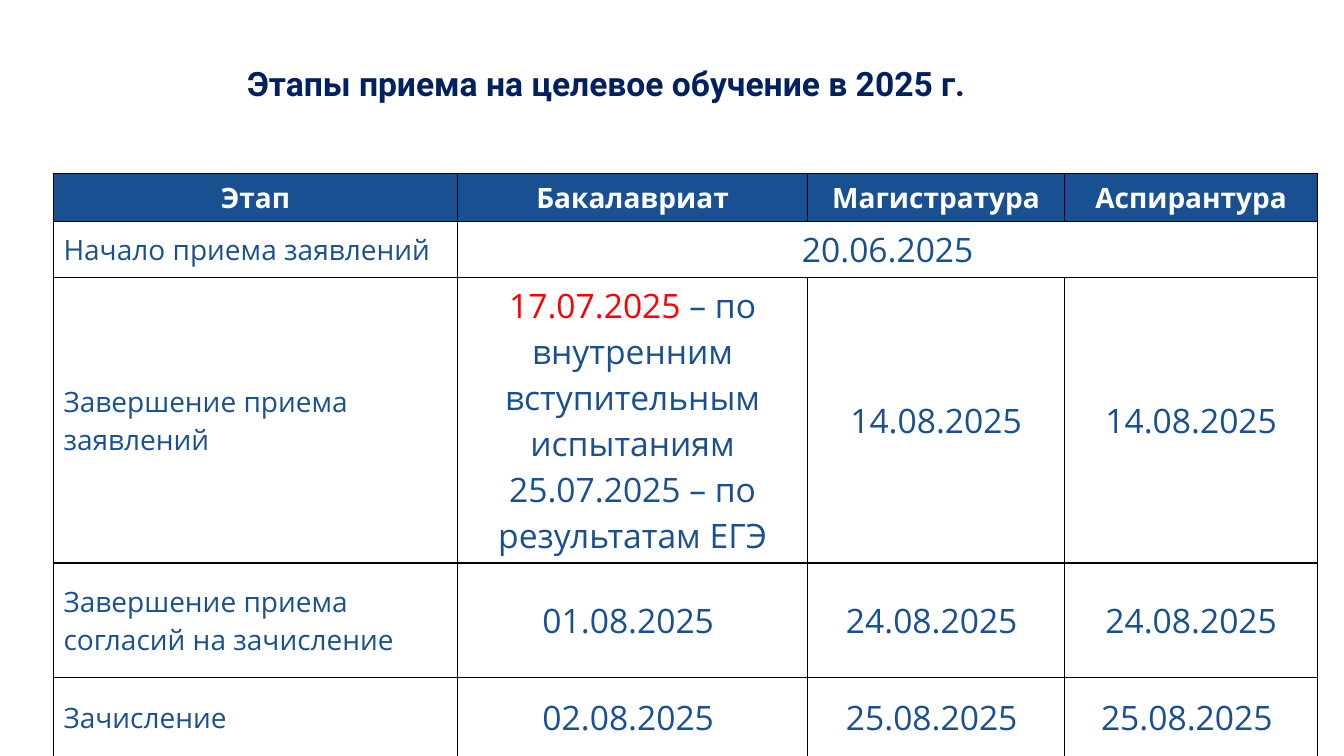
"""Builds the slide with the stages of targeted admission in 2025."""
from lxml import etree
from pptx import Presentation
from pptx.dml.color import RGBColor
from pptx.enum import text
from pptx.oxml import ns
from pptx.util import Inches, Pt

NAVY, BLUE, RED, WHITE, BLACK = "002060", "195091", "FF0000", "FFFFFF", "000000"

TITLE = "Этапы приема на целевое обучение в 2025 г."
HEADINGS = ["Этап", "Бакалавриат", "Магистратура", "Аспирантура"]
BACHELOR_DEADLINES = [
    ("17.07.2025 ", RED),
    ("– по внутренним вступительным испытаниям 25.07.2025 – по результатам ЕГЭ", BLUE),
]
STAGES = [
    ("Начало приема заявлений", "20.06.2025"),
    ("Завершение приема заявлений", BACHELOR_DEADLINES, "14.08.2025", "14.08.2025"),
    ("Завершение приема согласий на зачисление", "01.08.2025 ", "24.08.2025 ", "24.08.2025"),
    ("Зачисление", "02.08.2025 ", "25.08.2025 ", "25.08.2025 "),
]
TITLE_BOX = {"left": 2.35, "top": 0, "width": 11.5, "height": 1.7}
TABLE_LEFT, TABLE_TOP = 0.53, 1.72
COLUMN_WIDTHS = [4.01, 3.47, 2.55, 2.51]
ROW_HEIGHTS = [0.45, 0.52, 2.59, 1.14, 0.79]

TITLE_FONT = {"name": "Roboto", "size": Pt(24), "bold": True}
HEADING_FONT = {"name": "Open Sans", "size": Pt(20), "bold": True}
STAGE_FONT = {"name": "Open Sans", "size": Pt(20), "bold": False}
DATE_FONT = {"name": "Open Sans", "size": Pt(24), "bold": False}


def color(value):
    return RGBColor.from_string(value)


def write(paragraph, pieces, font_format, align):
    paragraph.alignment = align
    for wording, tint in pieces:
        run = paragraph.add_run()
        run.text = wording
        for key, value in font_format.items():
            setattr(run.font, key, value)
        run.font.color.rgb = color(tint)


def add_borders(cell):
    properties = cell._tc.get_or_add_tcPr()
    for position, side in enumerate(("lnL", "lnR", "lnT", "lnB")):
        border = etree.Element(ns.qn(f"a:{side}"), w=str(Pt(1)))
        fill = etree.SubElement(border, ns.qn("a:solidFill"))
        etree.SubElement(fill, ns.qn("a:srgbClr"), val=BLACK)
        properties.insert(position, border)


def add_title(slide):
    title = slide.shapes.title
    for key, value in TITLE_BOX.items():
        setattr(title, key, Inches(value))
    title.text_frame.vertical_anchor = text.MSO_ANCHOR.MIDDLE
    heading = title.text_frame.paragraphs[0]
    heading.line_spacing = 0.9
    write(heading, [(TITLE, NAVY)], TITLE_FONT, text.PP_ALIGN.LEFT)


def add_schedule(slide):
    schedule = slide.shapes.add_table(
        len(ROW_HEIGHTS), len(COLUMN_WIDTHS), Inches(TABLE_LEFT), Inches(TABLE_TOP),
        Inches(sum(COLUMN_WIDTHS)), Inches(sum(ROW_HEIGHTS))).table
    for column, width in zip(schedule.columns, COLUMN_WIDTHS):
        column.width = Inches(width)
    for row, height in zip(schedule.rows, ROW_HEIGHTS):
        row.height = Inches(height)
    for cell in schedule.iter_cells():
        cell.vertical_anchor = text.MSO_ANCHOR.MIDDLE
        cell.fill.background()
        add_borders(cell)

    for r, entries in enumerate([HEADINGS, *STAGES]):
        for c, entry in enumerate(entries):
            cell = schedule.cell(r, c)
            align, tint = text.PP_ALIGN.CENTER, BLUE
            if r == 0:
                font_format, tint = HEADING_FONT, WHITE
                cell.fill.solid()
                cell.fill.fore_color.rgb = color(BLUE)
            elif c == 0:
                font_format, align = STAGE_FONT, text.PP_ALIGN.LEFT
            else:
                font_format = DATE_FONT
            pieces = [(entry, tint)] if isinstance(entry, str) else entry
            write(cell.text_frame.paragraphs[0], pieces, font_format, align)
        if len(entries) < len(HEADINGS):
            schedule.cell(r, len(entries) - 1).merge(schedule.cell(r, len(HEADINGS) - 1))


def main():
    deck = Presentation()
    deck.slide_width, deck.slide_height = Inches(13.33), Inches(7.5)
    slide = deck.slides.add_slide(deck.slide_layouts[5])
    add_title(slide)
    add_schedule(slide)
    deck.save("out.pptx")


if __name__ == "__main__":
    main()
